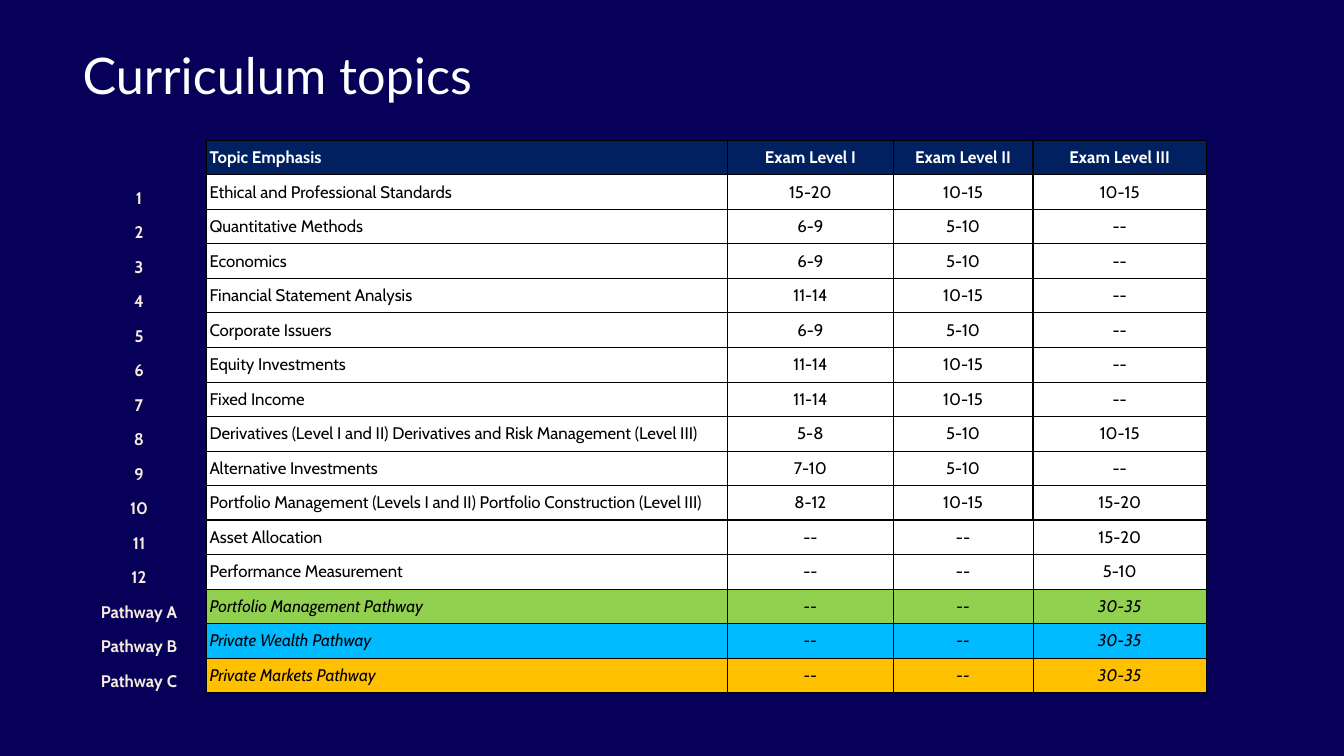
from lxml import etree
from pptx import Presentation
from pptx.dml.color import RGBColor
from pptx.enum.text import MSO_ANCHOR, PP_ALIGN
from pptx.oxml.ns import qn
from pptx.util import Inches, Pt

LEFT, CENTER = PP_ALIGN.LEFT, PP_ALIGN.CENTER
TOP, MIDDLE, BOTTOM = MSO_ANCHOR.TOP, MSO_ANCHOR.MIDDLE, MSO_ANCHOR.BOTTOM
NO_STYLE = "{2D5ABB26-0587-4C30-8999-92F81FD0307C}"
THIN, THICK = 0.5, 1

COLORS = {
    "navy": "060059", "header": "002060", "white": "FFFFFF", "black": "000000",
    "cream": "F6EBDE", "green": "92D050", "blue": "00BBFF", "amber": "FFC000",
}

HEADINGS = ["Topic Emphasis", "Exam Level I", "Exam Level II", "Exam Level III"]
TOPICS = [
    ("Ethical and Professional Standards", "15-20", "10-15", "10-15"),
    ("Quantitative Methods", "6-9", "5-10", "--"),
    ("Economics", "6-9", "5-10", "--"),
    ("Financial Statement Analysis", "11-14", "10-15", "--"),
    ("Corporate Issuers", "6-9", "5-10", "--"),
    ("Equity Investments", "11-14", "10-15", "--"),
    ("Fixed Income", "11-14", "10-15", "--"),
    ("Derivatives (Level I and II) Derivatives and Risk Management (Level III)",
     "5-8", "5-10", "10-15"),
    ("Alternative Investments", "7-10", "5-10", "--"),
    ("Portfolio Management (Levels I and II) Portfolio Construction (Level III)",
     "8-12", "10-15", "15-20"),
    ("Asset Allocation", "--", "--", "15-20"),
    ("Performance Measurement", "--", "--", "5-10"),
]
PATHWAYS = [
    ("A", "Portfolio Management Pathway", "green"),
    ("B", "Private Wealth Pathway", "blue"),
    ("C", "Private Markets Pathway", "amber"),
]


class Deck:
    """Slide with its style; positions and sizes are percentages of the slide."""

    title_font, body_font = "Lato", "Cabin"

    def __init__(self):
        self.prs = Presentation()
        self.prs.slide_width, self.prs.slide_height = Inches(13.33), Inches(7.5)
        self.s = self.prs.slides.add_slide(self.prs.slide_layouts[6])
        self.paint(self.s.background.fill, "navy")

    def x(self, share):
        return round(self.prs.slide_width * share / 100)

    def y(self, share):
        return round(self.prs.slide_height * share / 100)

    def paint(self, fill, color):
        fill.solid()
        fill.fore_color.rgb = RGBColor.from_string(COLORS[color])

    def set_text(self, tf, text, font, size, color, align=LEFT, bold=False,
                 italic=False):
        p = tf.paragraphs[0]
        p.text, p.alignment = text, align
        for r in p.runs:
            r.font.name, r.font.size = font, Pt(size)
            r.font.bold, r.font.italic = bold, italic
            r.font.color.rgb = RGBColor.from_string(COLORS[color])
        return p

    def title(self, text, left, top, width, height):
        box = self.s.shapes.add_textbox(
            self.x(left), self.y(top), self.x(width), self.y(height))
        tf = box.text_frame
        tf.word_wrap, tf.vertical_anchor = True, TOP
        tf.margin_left = tf.margin_right = tf.margin_top = tf.margin_bottom = 0
        self.set_text(tf, text, self.title_font, 36, "white").line_spacing = 0.9

    def table(self, left, top, widths, heights):
        frame = self.s.shapes.add_table(
            len(heights), len(widths), self.x(left), self.y(top),
            self.x(sum(widths)), self.y(sum(heights)))
        table = frame.table
        table.first_row = table.horz_banding = False
        frame._element.find(".//" + qn("a:tableStyleId")).text = NO_STYLE
        for column, width in zip(table.columns, widths):
            column.width = self.x(width)
        for row, height in zip(table.rows, heights):
            row.height = self.y(height)
        return table

    def borders(self, cell, **widths):
        for side, width in widths.items():
            ln = etree.SubElement(cell._tc.get_or_add_tcPr(), qn("a:ln" + side),
                                  w=str(Pt(width)))
            fill = etree.SubElement(ln, qn("a:solidFill"))
            etree.SubElement(fill, qn("a:srgbClr"), val=COLORS["black"])

    def cell(self, cell, text, color, margin, anchor=MIDDLE, fill=None, **style):
        cell.margin_left = cell.margin_right = Inches(margin)
        cell.margin_top = cell.margin_bottom = Inches(margin)
        cell.vertical_anchor = anchor
        self.set_text(cell.text_frame, text, self.body_font, 12, color, **style)
        if fill:
            self.paint(cell.fill, fill)
        else:
            cell.fill.background()


def border_widths(row, col):
    """Thick lines frame the table, the header, and the first ten topics."""
    heavy_rows = (1, 2, 12, 17)
    heavy_cols = (1, 4, 5) if row < 12 else (1, 5)

    def pick(line, heavy):
        return THICK if line in heavy else THIN

    return {"L": pick(col, heavy_cols), "R": pick(col + 1, heavy_cols),
            "T": pick(row, heavy_rows), "B": pick(row + 1, heavy_rows)}


def main():
    deck = Deck()
    deck.title("Curriculum topics", 6.15, 6.8, 82.8, 8.53)

    rows = [("", HEADINGS, "header")]
    rows += [(str(n), topic, "white") for n, topic in enumerate(TOPICS, 1)]
    rows += [(f"Pathway {letter}", (name, "--", "--", "30-35"), color)
             for letter, name, color in PATHWAYS]

    table = deck.table(5.32, 13.07, [10.05, 38.78, 12.3, 10.42, 12.9],
                       [5.47] + [73.1 / len(rows)] * len(rows))
    for col in range(5):
        deck.cell(table.cell(0, col), "", "white", 0)
    for row, (label, values, fill) in enumerate(rows, 1):
        deck.cell(table.cell(row, 0), label, "cream", 0.01, BOTTOM,
                  align=CENTER, bold=True)
        header = fill == "header"
        for col, value in enumerate(values, 1):
            cell = table.cell(row, col)
            deck.borders(cell, **border_widths(row, col))
            deck.cell(cell, value, "white" if header else "black", 0.03, fill=fill,
                      align=LEFT if col == 1 else CENTER, bold=header,
                      italic=fill not in ("header", "white"))

    deck.prs.save("out.pptx")


if __name__ == "__main__":
    main()
